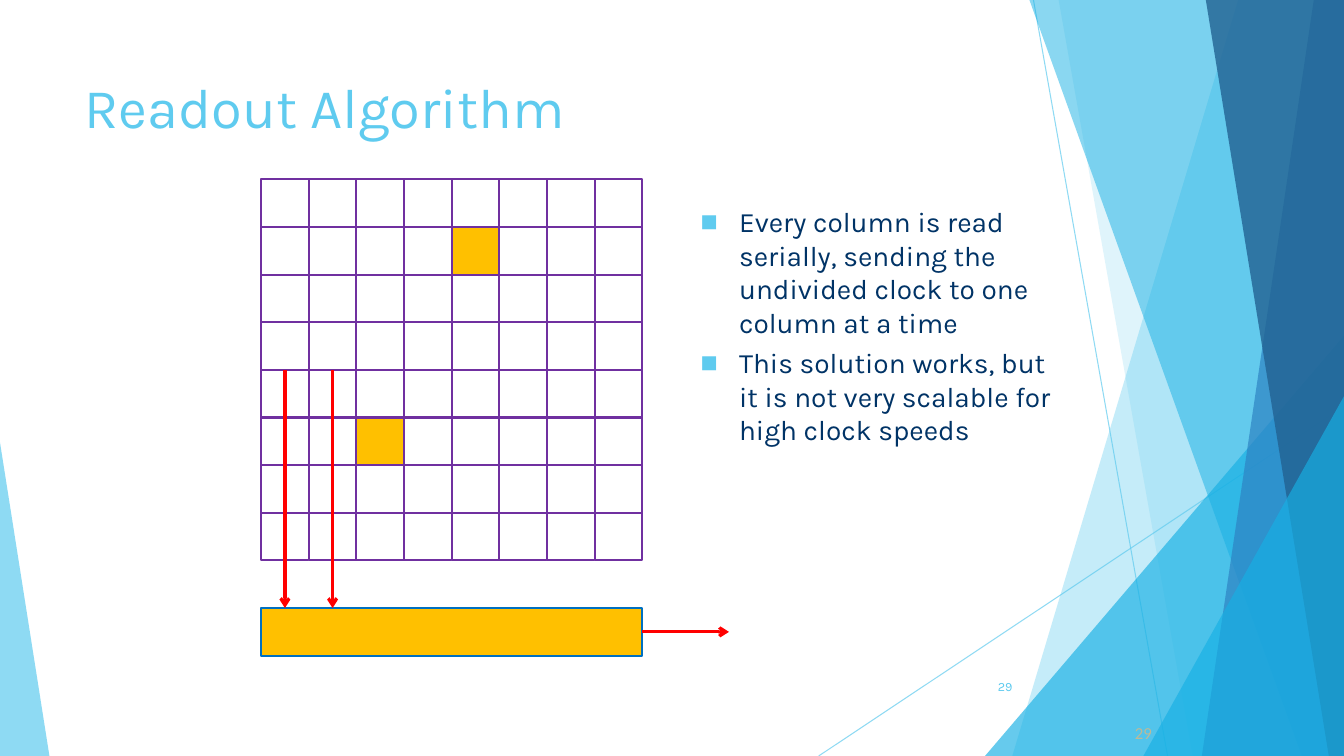
from lxml import etree
from pptx import Presentation
from pptx import util as u
from pptx.dml.color import RGBColor
from pptx.enum import shapes, text
from pptx.oxml.ns import qn

W, H = 13.33, 7.5
SKY, CYAN, BLUE, NAVY = "5FCBEF", "17B0E4", "2E83C3", "226292"
PURPLE, AMBER, RED = "7030A0", "FFC000", "FF0000"


def rgb(color):
    return RGBColor.from_string(color)


def add_xml(parent, tag, **attrs):
    return etree.SubElement(parent, qn(tag), attrs)


def set_alpha(sp, percent):
    """Make the first colour of a shape's fill or line translucent."""
    clr = next(sp.element.spPr.iter(qn("a:srgbClr")))
    add_xml(clr, "a:alpha", val=str(percent * 1000))


def paint(sp, fill, line=None, alpha=None):
    sp.shadow.inherit = False
    sp.fill.solid()
    sp.fill.fore_color.rgb = rgb(fill)
    if alpha:
        set_alpha(sp, alpha)
    if line:
        sp.line.color.rgb = rgb(line)
        sp.line.width = u.Pt(1.5)
    else:
        sp.line.fill.background()


def add_box(parent, kind, x, y, w, h):
    return parent.add_shape(kind, u.Inches(x), u.Inches(y), u.Inches(w), u.Inches(h))


def add_line(parent, start, end, color, width, alpha=None, arrow=False):
    points = [u.Inches(v) for v in (*start, *end)]
    cx = parent.add_connector(shapes.MSO_CONNECTOR.STRAIGHT, *points)
    cx.line.color.rgb = rgb(color)
    cx.line.width = u.Pt(width)
    if alpha:
        set_alpha(cx, alpha)
    if arrow:
        add_xml(cx.line._get_or_add_ln(), "a:tailEnd", type="arrow")
    add_xml(cx.element.spPr, "a:effectLst")


def add_run(p, words, size, font, color):
    r = p.add_run()
    r.text = words
    r.font.size = u.Pt(size)
    r.font.name = font
    r.font.color.rgb = rgb(color)


def place(sp, x, y, w, h):
    sp.left, sp.top, sp.width, sp.height = (u.Inches(v) for v in (x, y, w, h))


def open_frame(sp, anchor):
    tf = sp.text_frame
    tf.word_wrap = True
    tf.auto_size = text.MSO_AUTO_SIZE.NONE
    tf.vertical_anchor = anchor
    return tf


def add_facets(s, w, h):
    """Translucent facets along the right edge and in the lower left corner."""
    facets = s.shapes.add_group_shape().shapes

    def band(top_x, bottom_x, color, alpha):
        corners = [(u.Inches(x), u.Inches(y)) for x, y in
                   ((top_x, 0), (w, 0), (w, h), (bottom_x, h))]
        builder = facets.build_freeform(*corners[0])
        builder.add_line_segments(corners[1:], close=True)
        paint(builder.convert_to_shape(), color, alpha=alpha)

    def corner(x, width, height, apex, color, alpha):
        sp = add_box(facets, shapes.MSO_SHAPE.ISOSCELES_TRIANGLE,
                     x, h - height, width, height)
        sp.adjustments[0] = apex
        paint(sp, color, alpha=alpha)

    add_line(facets, (10.25, 0), (11.58, h), SKY, 0.75, alpha=70)
    add_line(facets, (w, 4.03), (8.12, h), SKY, 0.75, alpha=70)
    band(12.28, 10.04, SKY, 36)
    band(10.5, 11.83, SKY, 20)
    corner(w - 3.56, 3.56, 4.17, 1, CYAN, 66)
    band(10.21, 12.91, CYAN, 50)
    band(13.03, 11.92, BLUE, 70)
    band(11.96, 13.18, NAVY, 80)
    corner(w - 1.99, 1.99, 3.57, 1, CYAN, 66)
    corner(0, 0.49, 3.11, 0, SKY, 70)


def add_title(s, x, y, w, h):
    sp = s.shapes.title
    s.shapes.element.append(sp.element)  # bring in front of the facets
    place(sp, x, y, w, h)
    p = open_frame(sp, text.MSO_ANCHOR.TOP).paragraphs[0]
    p.alignment = text.PP_ALIGN.LEFT
    add_run(p, "Readout Algorithm", 40, "Karla", SKY)


def add_pixel_readout(s, x, y, size, count=8):
    """Square pixel matrix with its readout register and arrows."""
    cell = size / count
    hits = {(1, 4), (5, 2)}
    pixels = s.shapes.add_group_shape().shapes
    for row in range(count):
        for col in range(count):
            sp = add_box(pixels, shapes.MSO_SHAPE.RECTANGLE,
                         x + col * cell, y + row * cell, cell, cell)
            paint(sp, AMBER if (row, col) in hits else "FFFFFF", PURPLE)

    register_y = y + (count + 1) * cell
    register = add_box(s.shapes, shapes.MSO_SHAPE.RECTANGLE, x, register_y, size, cell)
    paint(register, AMBER, "0070C0")
    for col in range(2):
        mid = x + (col + 0.5) * cell
        add_line(s.shapes, (mid, y + 4 * cell), (mid, register_y), RED, 2.25, arrow=True)
    mid = register_y + cell / 2
    add_line(s.shapes, (x + size, mid), (x + size + 0.86, mid), RED, 2.25, arrow=True)


def add_bullets(s, x, y, w, h, items):
    sp = s.placeholders[1]
    s.shapes.element.append(sp.element)
    place(sp, x, y, w, h)
    tf = open_frame(sp, text.MSO_ANCHOR.TOP)
    for i, item in enumerate(items):
        p = tf.add_paragraph() if i else tf.paragraphs[0]
        pPr = p._p.get_or_add_pPr()
        indent = u.Inches(0.38)
        pPr.set("marL", str(indent))
        pPr.set("indent", str(-indent))
        add_xml(add_xml(pPr, "a:buClr"), "a:srgbClr", val=SKY)
        add_xml(pPr, "a:buSzPct", val="65000")
        add_xml(pPr, "a:buFont", typeface="Karla")
        add_xml(pPr, "a:buChar", char="■")
        p.space_before = u.Pt(4.7 if i else 0)
        add_run(p, item, 20, "Karla", "003366")


def add_page_number(s, x, y, w, h, anchor, align, size, font, color):
    sp = s.shapes.add_textbox(*(u.Inches(v) for v in (x, y, w, h)))
    p = open_frame(sp, anchor).paragraphs[0]
    p.alignment = align
    add_run(p, "29", size, font, color)


def main():
    prs = Presentation()
    prs.slide_width, prs.slide_height = u.Inches(W), u.Inches(H)
    s = prs.slides.add_slide(prs.slide_layouts[1])
    add_facets(s, W, H)
    add_title(s, 0.74, 0.67, 9.4, 1.44)
    add_page_number(s, 11.09, 6.9, 0.5, 0.52, text.MSO_ANCHOR.BOTTOM,
                    text.PP_ALIGN.CENTER, 12, "Calibri", "BBBA99")
    add_pixel_readout(s, 2.59, 1.78, 3.78)
    add_bullets(s, 6.85, 1.98, 3.84, 4.06, [
        "Every column is read serially, sending the undivided clock "
        "to one column at a time",
        "This solution works, but it is not very scalable for high clock speeds",
    ])
    add_page_number(s, 9.39, 6.61, 0.75, 0.4, text.MSO_ANCHOR.MIDDLE,
                    text.PP_ALIGN.RIGHT, 9, "Karla", SKY)
    prs.save("out.pptx")


if __name__ == "__main__":
    main()
